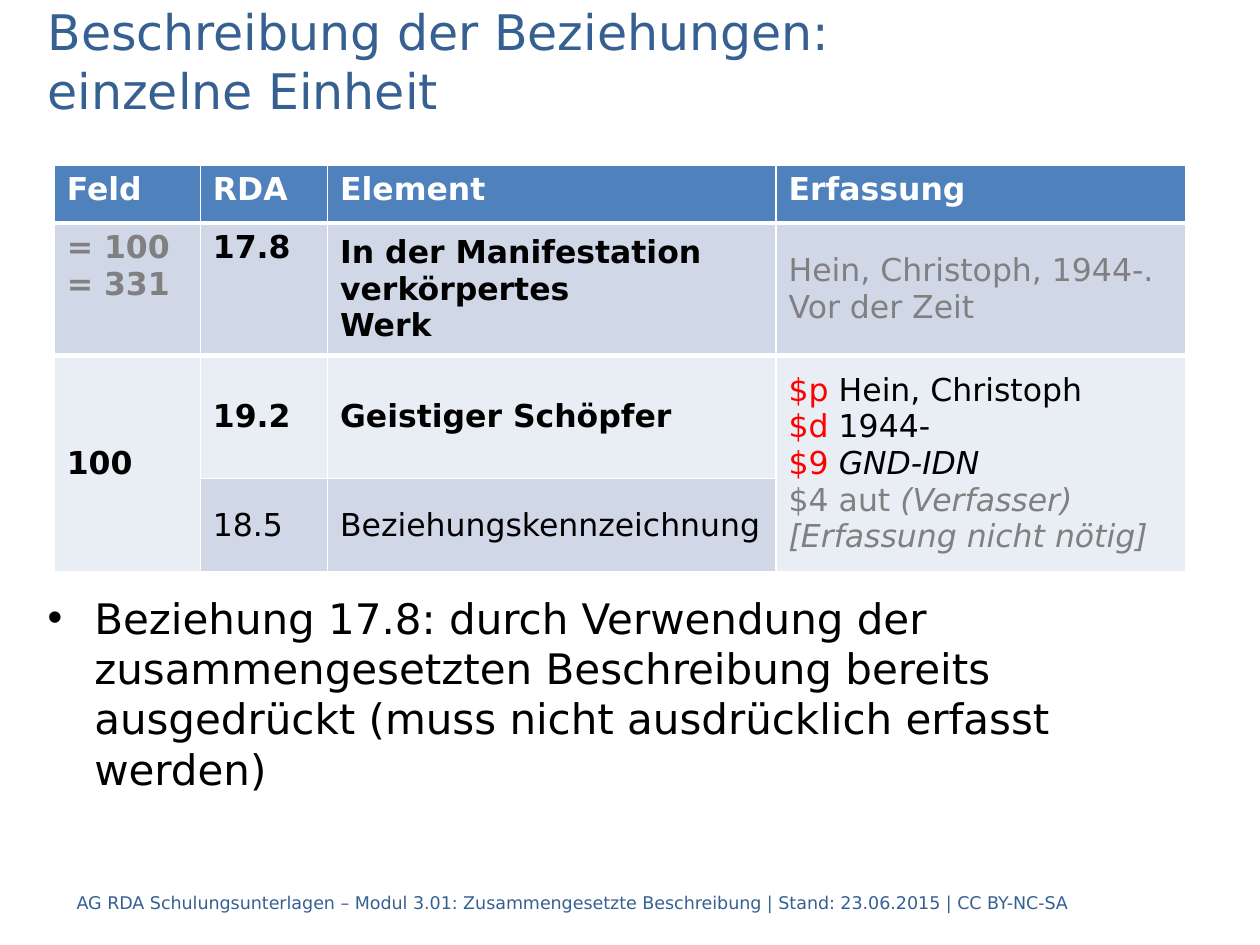
from dataclasses import dataclass

from lxml import etree
from pptx import Presentation
from pptx.dml.color import RGBColor
from pptx.enum.text import MSO_ANCHOR
from pptx.oxml.ns import qn
from pptx.slide import Slide
from pptx.table import _Cell
from pptx.text.text import TextFrame
from pptx.util import Inches, Pt

TOP, MIDDLE = MSO_ANCHOR.TOP, MSO_ANCHOR.MIDDLE
FONT = "DejaVu Sans"
WHITE = RGBColor(0xFF, 0xFF, 0xFF)
BLACK = RGBColor(0x00, 0x00, 0x00)
GRAY = RGBColor(0x80, 0x80, 0x80)
RED = RGBColor(0xFF, 0x00, 0x00)
NAVY = RGBColor(0x37, 0x60, 0x92)
HEADER_FILL = RGBColor(0x4F, 0x81, 0xBD)
DARK_BAND = RGBColor(0xD0, 0xD8, 0xE8)
LIGHT_BAND = RGBColor(0xE9, 0xED, 0xF4)

SLIDE_WIDTH, SLIDE_HEIGHT = Inches(10), Inches(7.5)
TABLE_LEFT, TABLE_TOP = Inches(0.43), Inches(1.31)
COLUMN_WIDTHS = (1.16, 1.01, 3.56, 3.25)
ROW_HEIGHTS = (0.46, 1.05, 0.98, 0.74)
BULLET_INDENT = Inches(0.37)
HEADER_RULE = Pt(3)


@dataclass(frozen=True)
class Span:
    text: str
    color: RGBColor | None = None
    italic: bool | None = None
    break_after: bool = False


@dataclass(frozen=True)
class Style:
    size: float
    color: RGBColor
    bold: bool = False
    bullet: bool = False


@dataclass(frozen=True)
class TextBox:
    left: float
    top: float
    width: float
    height: float
    anchor: MSO_ANCHOR
    style: Style
    spans: tuple[Span, ...]


@dataclass(frozen=True)
class TableCell:
    row: int
    column: int
    fill: RGBColor
    style: Style
    paragraphs: tuple[tuple[Span, ...], ...]
    anchor: MSO_ANCHOR = MIDDLE
    row_span: int = 1


HEADING = Style(18, WHITE, bold=True)
STRONG = Style(18, BLACK, bold=True)
STRONG_GRAY = Style(18, GRAY, bold=True)
PLAIN = Style(18, BLACK)
PLAIN_GRAY = Style(18, GRAY)

BOXES = (
    TextBox(0.028, 0.0, 0.945, 0.128, MIDDLE, Style(28, NAVY),
            (Span("Beschreibung der Beziehungen:", break_after=True),
             Span("einzelne Einheit"))),
    TextBox(0.028, 0.62, 0.945, 0.3, TOP, Style(24, BLACK, bullet=True),
            (Span("Beziehung 17.8: durch Verwendung der zusammengesetzten "
                  "Beschreibung bereits ausgedrückt (muss nicht ausdrücklich "
                  "erfasst werden)"),)),
    TextBox(0.051, 0.929, 0.874, 0.053, MIDDLE, Style(10, NAVY),
            (Span("AG RDA Schulungsunterlagen – Modul 3.01: Zusammengesetzte "
                  "Beschreibung | Stand: 23.06.2015 | CC BY-NC-SA"),)),
)

HEADER_CELLS = tuple(
    TableCell(0, column, HEADER_FILL, HEADING, ((Span(title),),), TOP)
    for column, title in enumerate(("Feld", "RDA", "Element", "Erfassung"))
)
BODY_CELLS = (
    TableCell(1, 0, DARK_BAND, STRONG_GRAY, ((Span("= 100"),), (Span("= 331"),)), TOP),
    TableCell(1, 1, DARK_BAND, STRONG, ((Span("17.8"),),), TOP),
    TableCell(1, 2, DARK_BAND, STRONG,
              ((Span("In der Manifestation verkörpertes"),), (Span("Werk"),))),
    TableCell(1, 3, DARK_BAND, PLAIN_GRAY,
              ((Span("Hein, Christoph, 1944-. Vor der Zeit"),),)),
    TableCell(2, 0, LIGHT_BAND, STRONG, ((Span("100"),),), row_span=2),
    TableCell(2, 1, LIGHT_BAND, STRONG, ((Span("19.2"),),)),
    TableCell(2, 2, LIGHT_BAND, STRONG, ((Span("Geistiger Schöpfer"),),)),
    TableCell(2, 3, LIGHT_BAND, PLAIN, (
        (Span("$p ", RED), Span("Hein, Christoph", break_after=True),
         Span("$d", RED), Span(" 1944-", break_after=True),
         Span("$9 ", RED), Span("GND-IDN", italic=True)),
        (Span("$4 aut ", GRAY),
         Span("(Verfasser) [Erfassung nicht nötig]", GRAY, italic=True)),
    ), row_span=2),
    TableCell(3, 1, DARK_BAND, PLAIN, ((Span("18.5"),),)),
    TableCell(3, 2, DARK_BAND, PLAIN, ((Span("Beziehungskennzeichnung"),),)),
)


def write_text(frame: TextFrame, style: Style,
               paragraphs: tuple[tuple[Span, ...], ...]) -> None:
    """Write paragraphs of spans in one shared style."""
    for index, spans in enumerate(paragraphs):
        para = frame.add_paragraph() if index else frame.paragraphs[0]
        if style.bullet:
            properties = para._p.get_or_add_pPr()
            properties.set("marL", str(BULLET_INDENT))
            properties.set("indent", str(-BULLET_INDENT))
            etree.SubElement(properties, qn("a:buFont")).set("typeface", "Arial")
            etree.SubElement(properties, qn("a:buChar")).set("char", "•")
        para.font.name = FONT
        para.font.size = Pt(style.size)
        para.font.bold = style.bold
        para.font.color.rgb = style.color
        for span in spans:
            run = para.add_run()
            run.text = span.text
            if span.color is not None:
                run.font.color.rgb = span.color
            if span.italic is not None:
                run.font.italic = span.italic
            if span.break_after:
                para.add_line_break()


def draw_box(slide: Slide, box: TextBox) -> None:
    """Place a text box by its shares of the slide size."""
    shape = slide.shapes.add_textbox(
        round(box.left * SLIDE_WIDTH), round(box.top * SLIDE_HEIGHT),
        round(box.width * SLIDE_WIDTH), round(box.height * SLIDE_HEIGHT))
    frame = shape.text_frame
    frame.word_wrap = True
    frame.vertical_anchor = box.anchor
    write_text(frame, box.style, (box.spans,))


def draw_rule(cell: _Cell, side: str) -> None:
    """Draw the thick white rule on one side of a cell."""
    line = etree.Element(qn(f"a:{side}"), w=str(HEADER_RULE))
    fill = etree.SubElement(line, qn("a:solidFill"))
    etree.SubElement(fill, qn("a:srgbClr")).set("val", str(WHITE))
    cell._tc.get_or_add_tcPr().insert(0, line)


def draw_table(slide: Slide, cells: tuple[TableCell, ...]) -> None:
    """Draw the table of relationships."""
    table = slide.shapes.add_table(
        len(ROW_HEIGHTS), len(COLUMN_WIDTHS), TABLE_LEFT, TABLE_TOP,
        Inches(sum(COLUMN_WIDTHS)), Inches(sum(ROW_HEIGHTS))).table
    for column, width in zip(table.columns, COLUMN_WIDTHS):
        column.width = Inches(width)
    for row, height in zip(table.rows, ROW_HEIGHTS):
        row.height = Inches(height)
    for item in cells:
        cell = table.cell(item.row, item.column)
        if item.row_span > 1:
            cell.merge(table.cell(item.row + item.row_span - 1, item.column))
        cell.fill.solid()
        cell.fill.fore_color.rgb = item.fill
        cell.vertical_anchor = item.anchor
        if item.row < 2:
            draw_rule(cell, "lnT" if item.row else "lnB")
        write_text(cell.text_frame, item.style, item.paragraphs)


def main() -> None:
    """Build and save the deck."""
    deck = Presentation()
    deck.slide_width, deck.slide_height = SLIDE_WIDTH, SLIDE_HEIGHT
    page = deck.slides.add_slide(deck.slide_layouts[6])
    for box in BOXES:
        draw_box(page, box)
    draw_table(page, HEADER_CELLS + BODY_CELLS)
    deck.save("out.pptx")


if __name__ == "__main__":
    main()
